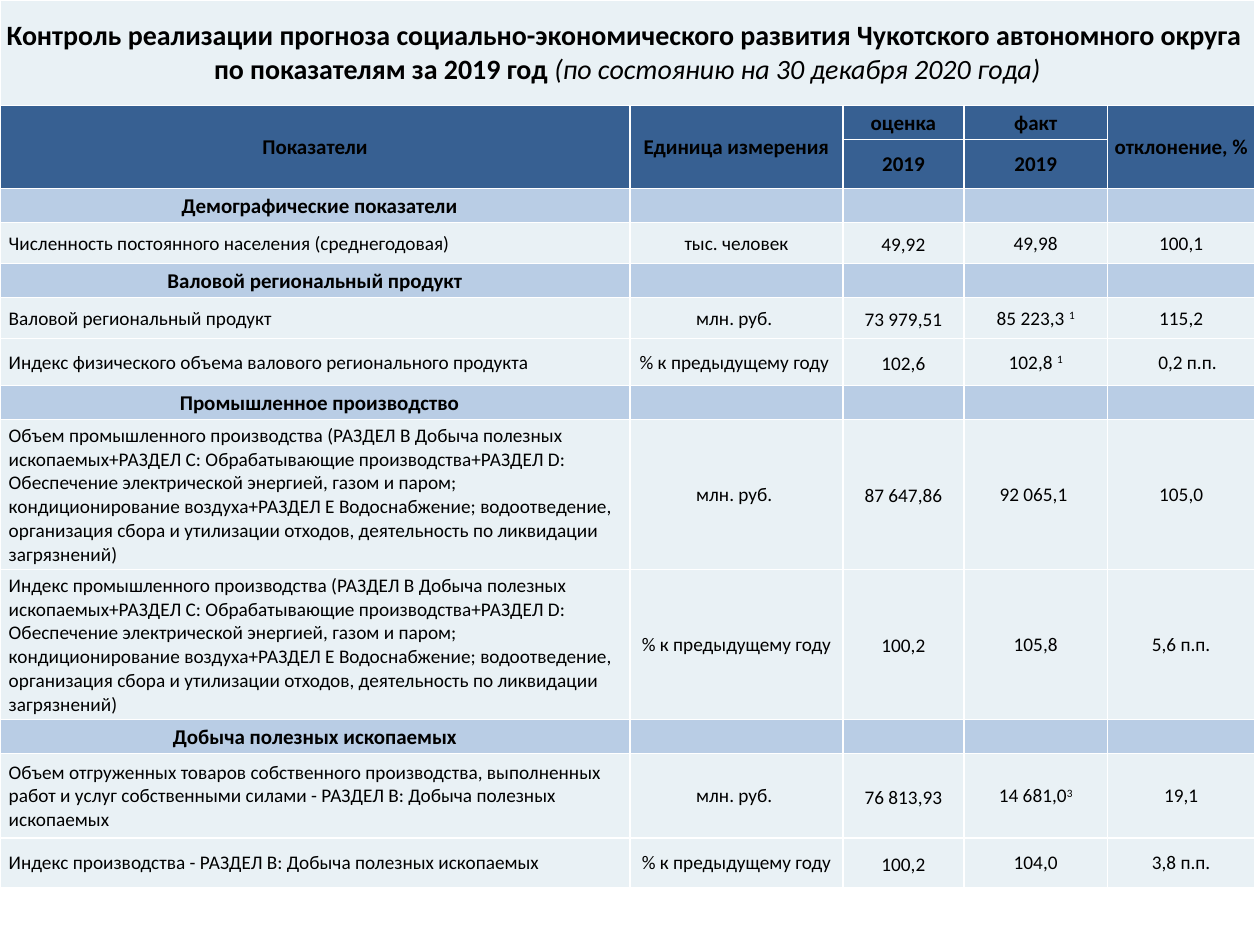
from dataclasses import dataclass

from lxml import etree
from pptx import Presentation
from pptx import util as u
from pptx.dml import color
from pptx.enum import text
from pptx.oxml import ns

FONT = "Calibri"
HEADER, SECTION, BODY, WHITE = "376092", "B9CDE5", "E9F1F5", "FFFFFF"
COLUMNS = [360, 121.7, 69.1, 82.1, 84.2]
TITLE_ROW, HEADER_ROWS, SECTION_ROW = 60.2, [19.4, 28.3], 19.4
CENTER, LEFT = text.PP_ALIGN.CENTER, text.PP_ALIGN.LEFT


@dataclass
class Span:
    words: str
    size: float = 11
    bold: bool = False
    italic: bool = False
    raised: bool = False


@dataclass
class Section:
    name: str
    indent: float = 0.7
    height: float = SECTION_ROW


@dataclass
class Indicator:
    name: str
    unit: str
    estimate: str
    actual: str
    deviation: str
    height: float
    note: str = ""
    deviation_indent: float = 0.7


INDUSTRY = (
    "промышленного производства (РАЗДЕЛ B Добыча полезных ископаемых+РАЗДЕЛ C: "
    "Обрабатывающие производства+РАЗДЕЛ D: Обеспечение электрической энергией, газом и паром; "
    "кондиционирование воздуха+РАЗДЕЛ E Водоснабжение; водоотведение, организация сбора и "
    "утилизации отходов, деятельность по ликвидации загрязнений)"
)
MINING = "РАЗДЕЛ B: Добыча полезных ископаемых"
MONEY, GROWTH = "млн. руб. ", "% к предыдущему году"

ROWS = [
    Section("Демографические показатели", indent=6),
    Indicator("Численность постоянного населения (среднегодовая)", "тыс. человек",
              "49,92", "49,98", "100,1", 23.4),
    Section("Валовой региональный продукт"),
    Indicator("Валовой региональный продукт", MONEY,
              "73 979,51", "85 223,3 ", "115,2", 23.4, note="1"),
    Indicator("Индекс физического объема валового регионального продукта", GROWTH + " ",
              "102,6", "102,8 ", "0,2 п.п.", 26.9, note="1", deviation_indent=8),
    Section("Промышленное производство", indent=6),
    Indicator("Объем " + INDUSTRY, MONEY, "87 647,86", "92 065,1 ", "105,0", 85.8),
    Indicator("Индекс " + INDUSTRY, GROWTH, "100,2", "105,8", "5,6 п.п.", 85.8),
    Section("Добыча полезных ископаемых"),
    Indicator("Объем отгруженных товаров собственного производства, выполненных работ и услуг "
              "собственными силами - " + MINING, MONEY,
              "76 813,93", "14 681,0", "19,1", 48.2, note="3"),
    Indicator("Индекс производства - " + MINING, GROWTH, "100,2", "104,0", "3,8 п.п.", 28.4),
]


def rgb(value: str) -> color.RGBColor:
    return color.RGBColor.from_string(value)


def add_borders(cell) -> None:
    properties = cell._tc.get_or_add_tcPr()
    for side in ("a:lnL", "a:lnR", "a:lnT", "a:lnB"):
        line = etree.SubElement(properties, ns.qn(side), w=str(u.Pt(1)))
        solid = etree.SubElement(line, ns.qn("a:solidFill"))
        etree.SubElement(solid, ns.qn("a:srgbClr"), val=WHITE)


def prepare_cell(cell, fill: str) -> None:
    """Give a cell its borders, fill and tight margins."""
    add_borders(cell)
    cell.fill.solid()
    cell.fill.fore_color.rgb = rgb(fill)
    cell.vertical_anchor = text.MSO_ANCHOR.MIDDLE
    cell.margin_left = cell.margin_right = cell.margin_top = u.Pt(0.7)
    cell.margin_bottom = u.Pt(0)
    # A small end mark lets empty cells stay as low as their row
    para = cell.text_frame.paragraphs[0]
    etree.SubElement(para._p, ns.qn("a:endParaRPr"), sz="1100")


def write(cell, spans: list[Span], align=CENTER, indent: float = 0.7, spacing: float = 1.0) -> None:
    cell.margin_left = u.Pt(indent)
    para = cell.text_frame.paragraphs[0]
    para.alignment = align
    para.line_spacing = spacing
    for span in spans:
        for number, line in enumerate(span.words.split("\n")):
            if number:
                para.add_line_break()
            run = para.add_run()
            run.text = line
            font = run.font
            font.name, font.size = FONT, u.Pt(span.size)
            font.bold, font.italic = span.bold, span.italic
            font.color.rgb = rgb("000000")
            if span.raised:
                run._r.get_or_add_rPr().set("baseline", "30000")


def write_header(table) -> None:
    table.cell(0, 0).merge(table.cell(0, 4))
    write(table.cell(0, 0), [
        Span("Контроль реализации прогноза социально-экономического развития Чукотского "
             "автономного округа \nпо показателям за 2019 год ", 16, bold=True),
        Span("(по состоянию на 30 декабря 2020 года)", 16, italic=True),
    ])
    for column, label in ((0, "Показатели"), (1, "Единица измерения"), (4, "отклонение, %")):
        table.cell(1, column).merge(table.cell(2, column))
        write(table.cell(1, column), [Span(label, 12, bold=True)])
    for column, label in ((2, "оценка"), (3, "факт")):
        write(table.cell(1, column), [Span(label, 12, bold=True)])
        write(table.cell(2, column), [Span("2019", 12, bold=True)])


def write_indicator(cells, item: Indicator) -> None:
    name, unit, estimate, actual, deviation = cells
    write(name, [Span(item.name)], align=LEFT, indent=5)
    write(unit, [Span(item.unit)])
    write(estimate, [Span(item.estimate)], indent=5, spacing=1.15)
    estimate.margin_right, estimate.margin_top = u.Pt(5), u.Pt(0)
    note = [Span(item.note, raised=True)] if item.note else []
    write(actual, [Span(item.actual)] + note)
    write(deviation, [Span(item.deviation)], indent=item.deviation_indent)


def main() -> None:
    deck = Presentation()
    deck.slide_width, deck.slide_height = u.Pt(720), u.Pt(540)
    page = deck.slides.add_slide(deck.slide_layouts[6])

    # Table grid
    heights = [TITLE_ROW, *HEADER_ROWS, *(row.height for row in ROWS)]
    fills = [BODY, HEADER, HEADER]
    fills += [SECTION if isinstance(row, Section) else BODY for row in ROWS]
    table = page.shapes.add_table(len(heights), len(COLUMNS), u.Pt(0), u.Pt(0),
                                  u.Pt(sum(COLUMNS)), u.Pt(sum(heights))).table
    table.first_row = table.horz_banding = False
    for column, width in zip(table.columns, COLUMNS):
        column.width = u.Pt(width)
    for row, height, fill in zip(table.rows, heights, fills):
        row.height = u.Pt(height)
        for cell in row.cells:
            prepare_cell(cell, fill)

    # Title and column headings
    write_header(table)

    # Sections and indicators
    for number, item in enumerate(ROWS, start=3):
        cells = [table.cell(number, column) for column in range(len(COLUMNS))]
        if isinstance(item, Section):
            write(cells[0], [Span(item.name, 12, bold=True)], indent=item.indent)
        else:
            write_indicator(cells, item)

    deck.save("out.pptx")


if __name__ == "__main__":
    main()
